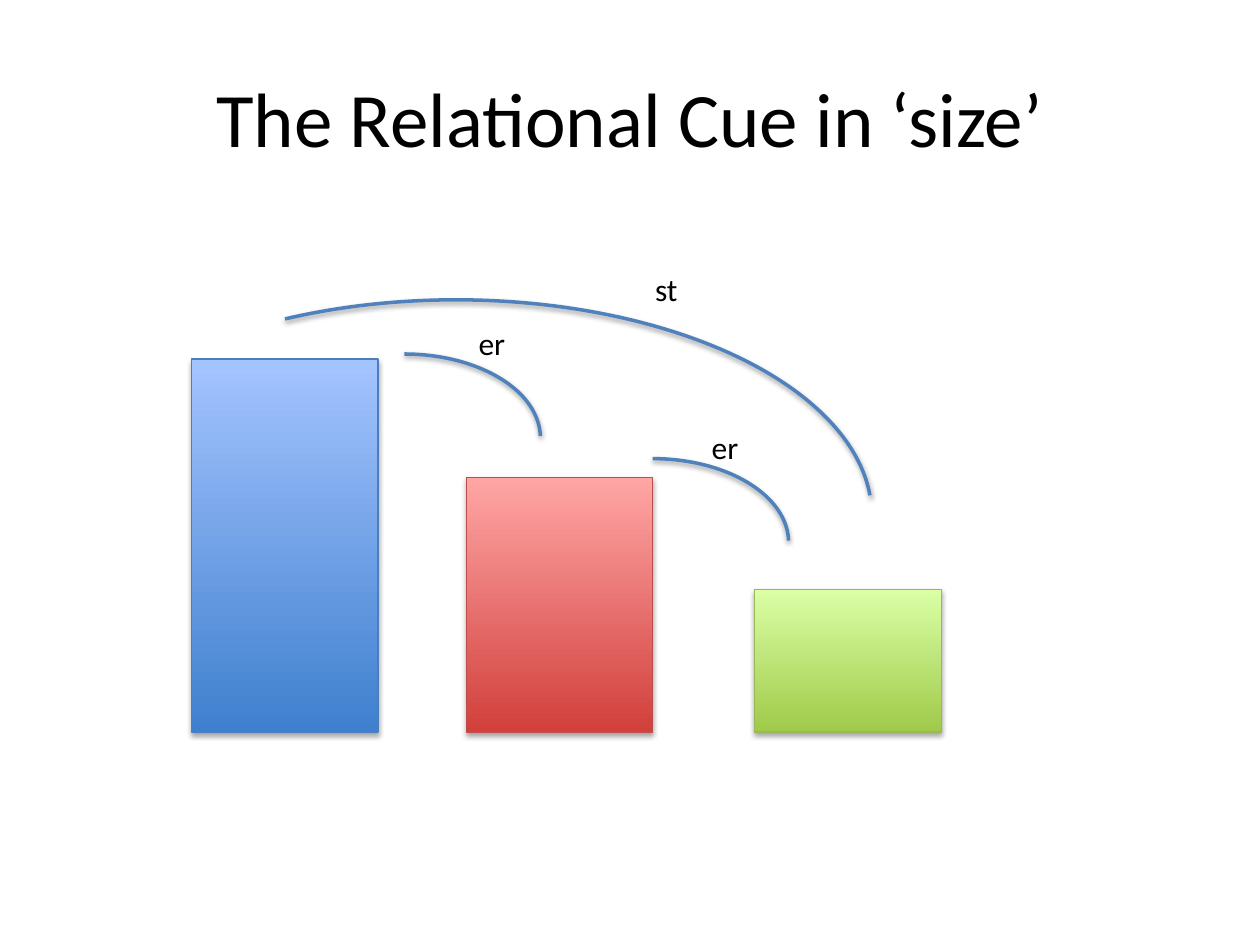
from lxml import etree
from pptx import Presentation
from pptx.dml.color import RGBColor
from pptx.enum.shapes import MSO_SHAPE
from pptx.enum.text import MSO_ANCHOR, MSO_AUTO_SIZE, PP_ALIGN
from pptx.oxml.ns import qn
from pptx.util import Inches, Pt

RECTANGLE, ARC = MSO_SHAPE.RECTANGLE, MSO_SHAPE.ARC
LEFT, CENTER = PP_ALIGN.LEFT, PP_ALIGN.CENTER
TOP, MIDDLE = MSO_ANCHOR.TOP, MSO_ANCHOR.MIDDLE
GROW, FIXED = MSO_AUTO_SIZE.SHAPE_TO_FIT_TEXT, MSO_AUTO_SIZE.NONE

FONT = "Calibri"
BLACK = "000000"
ARC_COLOR = "4F81BD"
BLANK_LAYOUT = 6
BAR_WIDTH = 1.48
LABEL_SIZE = (0.89, 0.4)

# left offset, height, bottom colour, top colour, outline
BARS = [
    (0, 2.96, "3F80CE", "A4C4FF", "4B7EBC"),
    (2.18, 2.02, "D1403C", "FFA6A5", "BF4C48"),
    (4.47, 1.13, "A0CA4A", "DAFFA5", "98B955"),
]
# arc offset, arc size, start and end adjustments, label, label offset
RELATIONS = [
    ((0.61, 0.72), (2.16, 1.33), (162, 215.54), "er", (2.18, 0.43)),
    ((2.58, 1.55), (2.16, 1.33), (162, 215.54), "er", (4.03, 1.26)),
    ((-1.2, 0.29), (6.6, 3.43), (137.42, 214.29), "st", (3.58, 0)),
]


def rgb(color):
    return RGBColor.from_string(color)


def inches(box):
    return [Inches(length) for length in box]


def add_text(slide, box, text, size=18, align=LEFT, anchor=TOP, auto_size=GROW):
    frame = slide.shapes.add_textbox(*inches(box)).text_frame
    frame.word_wrap = True
    frame.auto_size = auto_size
    frame.vertical_anchor = anchor
    paragraph = frame.paragraphs[0]
    paragraph.alignment = align
    run = paragraph.add_run()
    run.text = text
    run.font.name = FONT
    run.font.size = Pt(size)
    run.font.color.rgb = rgb(BLACK)


def add_shadow(shape, opacity, distance, blur=3.1):
    shape.shadow.inherit = False
    effects = shape._element.spPr.find(qn("a:effectLst"))
    shadow = etree.SubElement(
        effects, qn("a:outerShdw"), blurRad=str(Pt(blur)), dist=str(Pt(distance)),
        dir="5400000", rotWithShape="0")
    color = etree.SubElement(shadow, qn("a:srgbClr"), val=BLACK)
    etree.SubElement(color, qn("a:alpha"), val=str(opacity * 1000))


def add_outlined(slide, kind, box, line_color, line_width):
    shape = slide.shapes.add_shape(kind, *inches(box))
    shape.line.color.rgb = rgb(line_color)
    shape.line.width = Pt(line_width)
    return shape


def add_bar(slide, box, bottom_color, top_color, outline):
    bar = add_outlined(slide, RECTANGLE, box, outline, 0.75)
    bar.fill.gradient()
    bar.fill.gradient_angle = 90
    for stop, color in zip(bar.fill.gradient_stops, (bottom_color, top_color)):
        stop.color.rgb = rgb(color)
    add_shadow(bar, opacity=35, distance=1.8)


def add_arc(slide, box, angles):
    arc = add_outlined(slide, ARC, box, ARC_COLOR, 2)
    arc.fill.background()
    for index, angle in enumerate(angles):
        arc.adjustments[index] = angle
    add_shadow(arc, opacity=38, distance=1.6)


def add_title(slide, box):
    add_text(slide, box, "The Relational Cue in ‘size’", size=44,
             align=CENTER, anchor=MIDDLE, auto_size=FIXED)


def add_size_diagram(slide, box):
    left, top, _, height = box

    # Bars stand on a shared baseline
    for offset, bar_height, *colors in BARS:
        bar_top = top + height - bar_height
        add_bar(slide, (left + offset, bar_top, BAR_WIDTH, bar_height), *colors)

    # Arcs relate the bars to each other
    for (x, y), size, angles, _, _ in RELATIONS:
        add_arc(slide, (left + x, top + y, *size), angles)

    # Arc labels
    for _, _, _, label, (x, y) in RELATIONS:
        add_text(slide, (left + x, top + y, *LABEL_SIZE), label)


def main():
    presentation = Presentation()
    presentation.slide_width = Inches(10)
    presentation.slide_height = Inches(7.5)
    slide = presentation.slides.add_slide(presentation.slide_layouts[BLANK_LAYOUT])
    add_title(slide, (0.5, 0.3, 9, 1.25))
    add_size_diagram(slide, (1.52, 2.09, 5.95, 3.72))
    presentation.save("out.pptx")


if __name__ == "__main__":
    main()
